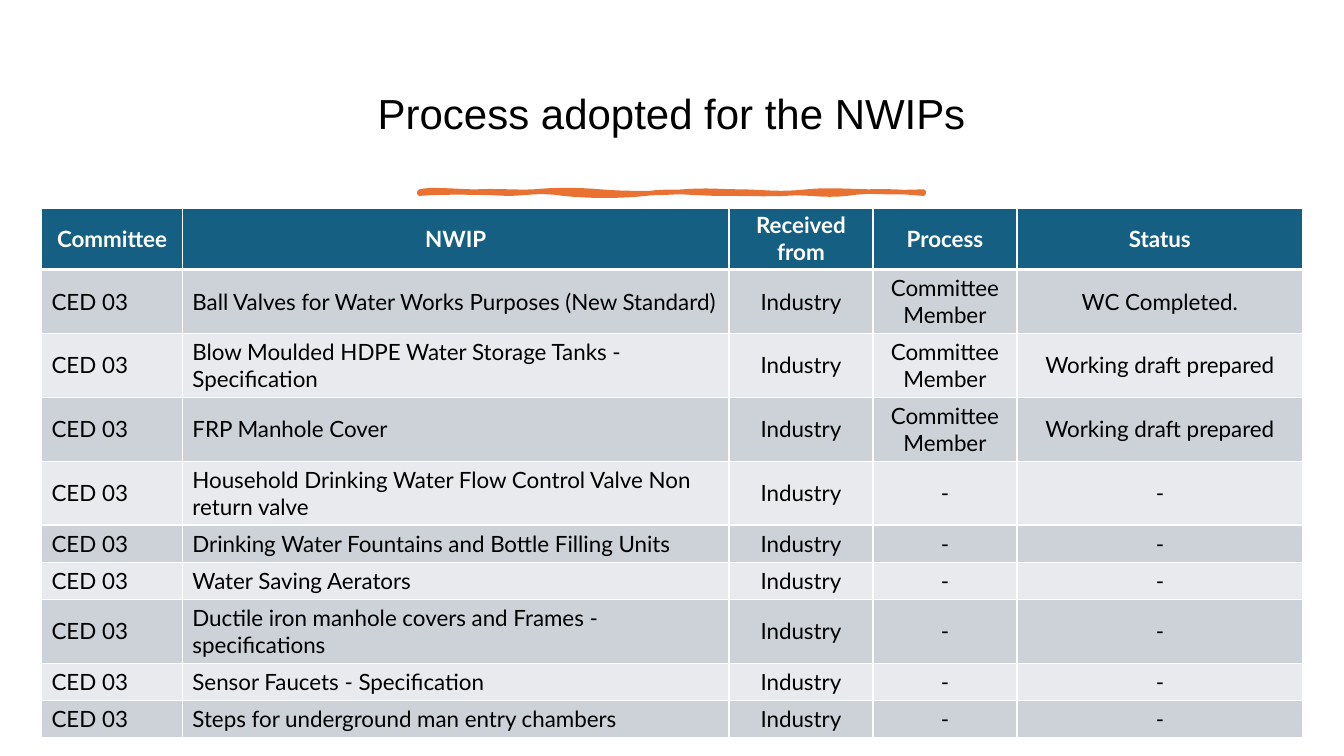
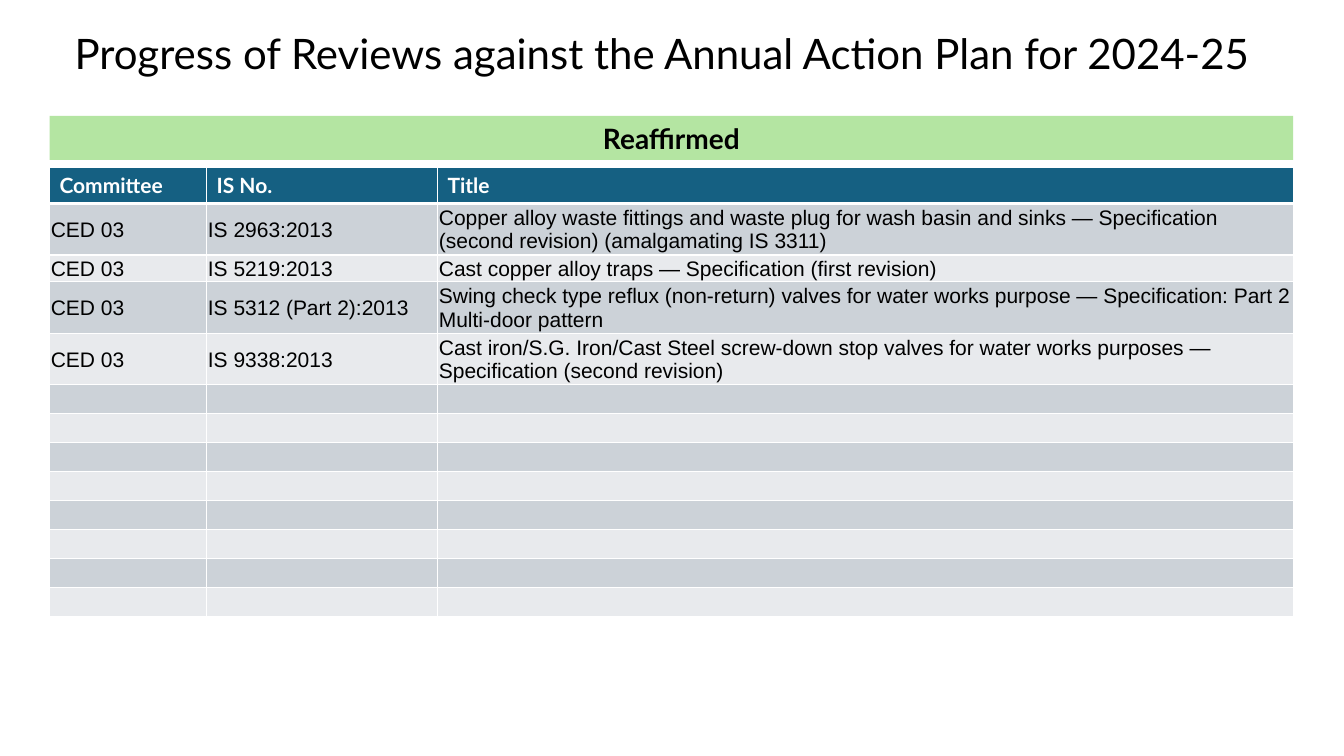
from lxml import etree
from pptx import Presentation
from pptx.dml.color import RGBColor
from pptx.enum.shapes import MSO_SHAPE
from pptx.enum.text import MSO_ANCHOR, MSO_AUTO_SIZE, PP_ALIGN
from pptx.oxml.ns import qn
from pptx.util import Cm, Pt

BLACK = RGBColor(0x00, 0x00, 0x00)
WHITE = RGBColor(0xFF, 0xFF, 0xFF)
TEAL = RGBColor(0x15, 0x60, 0x82)
ORANGE = RGBColor(0xE9, 0x71, 0x32)
GREEN = RGBColor(0xB4, 0xE5, 0xA2)
ROW_FILLS = (RGBColor(0xCC, 0xD2, 0xD8), RGBColor(0xE8, 0xEA, 0xED))
SANS, LATO = "Arial", "Lato"
LEFT, CENTER = PP_ALIGN.LEFT, PP_ALIGN.CENTER
TOP, MIDDLE, BOTTOM = MSO_ANCHOR.TOP, MSO_ANCHOR.MIDDLE, MSO_ANCHOR.BOTTOM
NO_FIT, GROW = MSO_AUTO_SIZE.NONE, MSO_AUTO_SIZE.SHAPE_TO_FIT_TEXT
RECT = MSO_SHAPE.RECTANGLE
TITLE_ONLY = 5
DEFAULT_INSETS = (0.25, 0.13, 0.25, 0.13)
WIDE_INSETS = (0.2, 0.1, 0.2, 0.1)
TIGHT_INSETS = (0.03, 0.03, 0.03, 0)
CURVE_STEPS = 8

COMMITTEE = "CED 03"
MEMBER = "Committee\nMember"
DRAFT = "Working draft prepared"
NWIPS = [
    ("Ball Valves for Water Works Purposes (New Standard)", MEMBER, "WC Completed."),
    ("Blow Moulded HDPE Water Storage Tanks - Specification", MEMBER, DRAFT),
    ("FRP Manhole Cover", MEMBER, DRAFT),
    ("Household Drinking Water Flow Control Valve Non return valve", "-", "-"),
    ("Drinking Water Fountains and Bottle Filling Units", "-", "-"),
    ("Water Saving Aerators", "-", "-"),
    ("Ductile iron manhole covers and Frames - specifications", "-", "-"),
    ("Sensor Faucets - Specification", "-", "-"),
    ("Steps for underground man entry chambers", "-", "-"),
]
REVIEWS = [
    ("IS 2963:2013", "Copper alloy waste fittings and waste plug for wash basin and sinks "
     "― Specification (second revision) (amalgamating IS 3311)"),
    ("IS 5219:2013", "Cast copper alloy traps ― Specification (first revision)"),
    ("IS 5312 (Part 2):2013", "Swing check type reflux (non-return) valves for water works "
     "purpose ― Specification: Part 2 Multi-door pattern"),
    ("IS 9338:2013", "Cast iron/S.G. Iron/Cast Steel screw-down stop valves for water works "
     "purposes ― Specification (second revision)"),
]
EMPTY_REVIEWS = 8

BRUSH_START = (10.57, 4.83)
BRUSH_CURVES = [
    ((10.87, 4.75), (11.53, 4.83), (12.01, 4.83)),
    ((12.5, 4.8), (12.93, 4.85), (13.44, 4.83)),
    ((13.94, 4.78), (14.58, 4.78), (15.14, 4.83)),
    ((15.67, 4.88), (16.59, 4.88), (17.2, 4.83)),
    ((17.83, 4.78), (18.14, 4.83), (18.77, 4.83)),
    ((19.38, 4.85), (19.66, 4.9), (20.32, 4.83)),
    ((20.98, 4.75), (22.02, 4.88), (23.27, 4.83)),
    ((23.29, 4.85), (23.27, 4.85), (23.27, 4.88)),
    ((22.73, 4.83), (21.97, 4.78), (21.34, 4.88)),
    ((20.7, 4.95), (20.35, 4.83), (19.79, 4.88)),
    ((19.2, 4.9), (18.97, 4.88), (18.21, 4.88)),
    ((17.45, 4.88), (16.94, 4.78), (16.28, 4.88)),
    ((15.6, 4.95), (14.86, 4.95), (14.2, 4.88)),
    ((13.56, 4.78), (13.28, 4.88), (12.78, 4.88)),
    ((12.27, 4.85), (11.13, 4.83), (10.57, 4.88)),
    ((10.57, 4.85), (10.57, 4.83), (10.57, 4.83)),
]


def bezier(p0, p1, p2, p3, t):
    """Return the point at t on a cubic curve."""
    u = 1 - t
    return tuple(u**3 * a + 3 * u * u * t * b + 3 * u * t * t * c + t**3 * d
                 for a, b, c, d in zip(p0, p1, p2, p3))


class Deck:
    """Hold the shared style and the current slide."""

    def __init__(self):
        """Start a widescreen presentation."""
        self.prs = Presentation()
        self.prs.slide_width, self.prs.slide_height = Cm(33.87), Cm(19.05)
        self.s = None

    def format(self, tf, size, font, color=BLACK, bold=False, align=CENTER):
        """Format every paragraph and run of a text frame."""
        for p in tf.paragraphs:
            p.alignment = align
            for r in p.runs:
                r.font.size, r.font.name, r.font.bold = Pt(size), font, bold
                r.font.color.rgb = color
            if not p.runs:
                etree.SubElement(p._p, qn("a:endParaRPr"), sz=str(size * 100))

    def slide(self, title, box, font, anchor):
        """Add a slide with a placed title."""
        self.s = self.prs.slides.add_slide(self.prs.slide_layouts[TITLE_ONLY])
        sp = self.s.shapes.title
        sp.left, sp.top, sp.width, sp.height = map(Cm, box)
        tf = sp.text_frame
        tf.text = title
        tf.auto_size, tf.vertical_anchor, tf.word_wrap = NO_FIT, anchor, True
        tf.paragraphs[0].line_spacing = 0.9
        self.format(tf, 30, font)

    def brush_line(self, start, curves):
        """Draw a hand-brushed line from cubic curves."""
        points, pen = [], start
        for curve in curves:
            points += [bezier(pen, *curve, i / CURVE_STEPS)
                       for i in range(1, CURVE_STEPS + 1)]
            pen = curve[-1]
        units = [(round(x * 1000), round(y * 1000)) for x, y in [start] + points]
        fb = self.s.shapes.build_freeform(*units[0], scale=Cm(1) / 1000)
        fb.add_line_segments(units[1:], close=True)
        sp = fb.convert_to_shape()
        sp.shadow.inherit = False
        sp.fill.solid()
        sp.fill.fore_color.rgb = ORANGE
        sp.line.color.rgb, sp.line.width = ORANGE, Pt(3.25)

    def band(self, text, box):
        """Add a filled heading band."""
        sp = self.s.shapes.add_shape(RECT, *map(Cm, box))
        sp.shadow.inherit = False
        sp.fill.solid()
        sp.fill.fore_color.rgb = GREEN
        sp.line.fill.background()
        tf = sp.text_frame
        tf.text = text
        tf.word_wrap, tf.auto_size = True, GROW
        self.format(tf, 20, LATO, bold=True)

    def borders(self, cell, bottom):
        """Give a cell white borders."""
        tc_pr = cell._tc.get_or_add_tcPr()
        for side, width in zip("LRTB", (1, 1, 1, bottom)):
            ln = etree.SubElement(tc_pr, qn(f"a:ln{side}"), w=str(Pt(width)))
            fill = etree.SubElement(ln, qn("a:solidFill"))
            etree.SubElement(fill, qn("a:srgbClr"), val=str(WHITE))

    def cell(self, cell, text, fill, insets, anchor, border, **style):
        """Fill and format one table cell."""
        self.borders(cell, border)
        cell.fill.solid()
        cell.fill.fore_color.rgb = fill
        (cell.margin_left, cell.margin_top,
         cell.margin_right, cell.margin_bottom) = map(Cm, insets)
        cell.vertical_anchor = anchor
        cell.text_frame.text = text
        self.format(cell.text_frame, **style)

    def table(self, pos, widths, heights, header, rows, size, font, aligns,
              head_align, head_anchor, head_insets, insets):
        """Add a table with a dark header and striped rows."""
        frame = self.s.shapes.add_table(
            len(heights), len(widths), *map(Cm, pos), Cm(sum(widths)), Cm(sum(heights)))
        table = frame.table
        for col, width in zip(table.columns, widths):
            col.width = Cm(width)
        for row, height in zip(table.rows, heights):
            row.height = Cm(height)
        for j, text in enumerate(header):
            self.cell(table.cell(0, j), text, TEAL, head_insets, head_anchor, 3,
                      size=size, font=LATO, color=WHITE, bold=True, align=head_align)
        for i, row in enumerate(rows):
            for j, text in enumerate(row):
                self.cell(table.cell(i + 1, j), text, ROW_FILLS[i % 2], insets, MIDDLE, 1,
                          size=size, font=font, align=aligns[j])


def main():
    """Build and save the deck."""
    deck = Deck()

    deck.slide("Process adopted for the NWIPs", (1.78, 1.17, 30.3, 3.48), SANS, MIDDLE)
    deck.brush_line(BRUSH_START, BRUSH_CURVES)
    single, double = 0.93, 1.61
    deck.table(
        (1.05, 5.24), (3.55, 13.77, 3.63, 3.63, 7.2),
        [1.55] + [double] * 4 + [single] * 2 + [double] + [single] * 2,
        ("Committee", "NWIP", "Received from", "Process", "Status"),
        [(COMMITTEE, name, "Industry", process, status) for name, process, status in NWIPS],
        16, LATO, (LEFT, LEFT, CENTER, CENTER, CENTER),
        CENTER, MIDDLE, WIDE_INSETS, DEFAULT_INSETS)

    deck.slide("Progress of Reviews against the Annual Action Plan for 2024-25",
               (0.43, 0.48, 32.51, 1.63), LATO, BOTTOM)
    deck.band("Reaffirmed", (1.25, 2.92, 31.34, 1.11))
    deck.table(
        (1.25, 4.23), (3.96, 5.82, 21.56),
        [0.89, 1.3, 0.67, 1.3, 1.3] + [0.73] * EMPTY_REVIEWS,
        ("Committee", "IS No.", "Title"),
        [(COMMITTEE, *review) for review in REVIEWS] + [("", "", "")] * EMPTY_REVIEWS,
        15, SANS, (LEFT, LEFT, LEFT),
        LEFT, TOP, DEFAULT_INSETS, TIGHT_INSETS)

    deck.prs.save("out.pptx")


if __name__ == "__main__":
    main()
